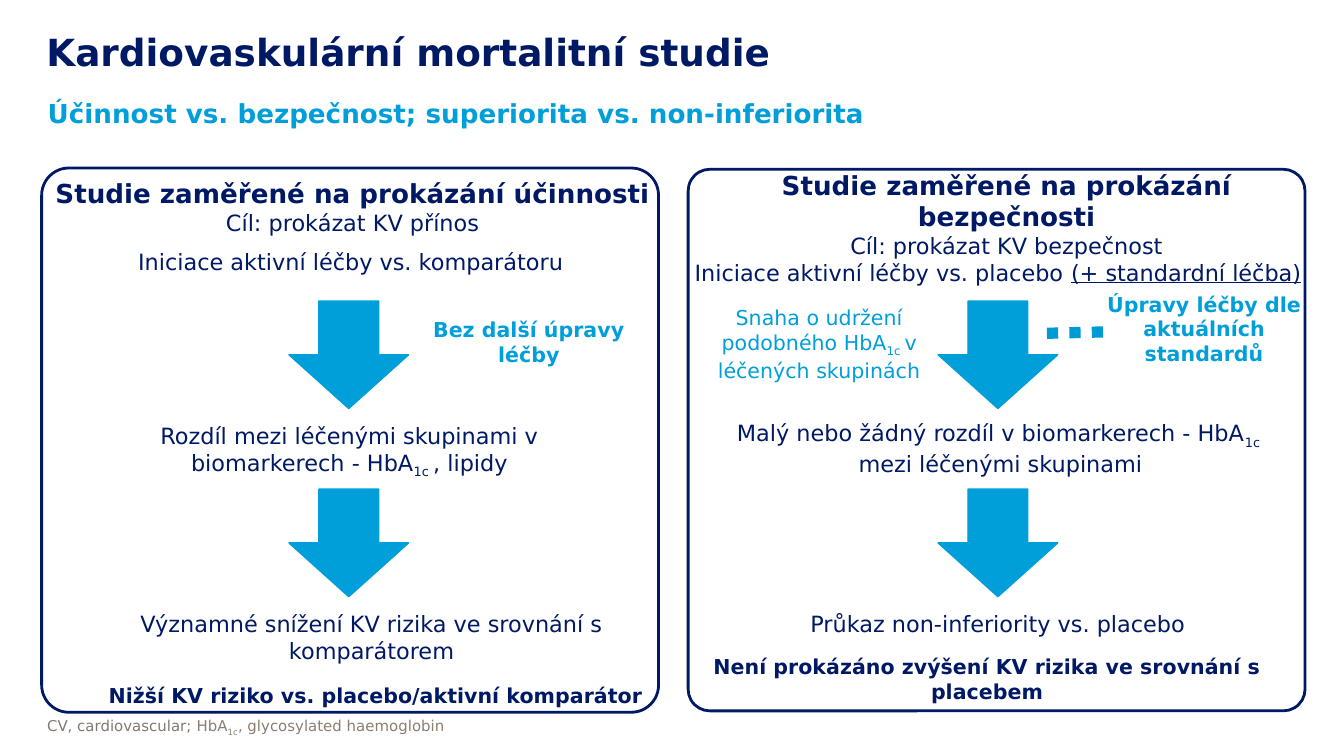
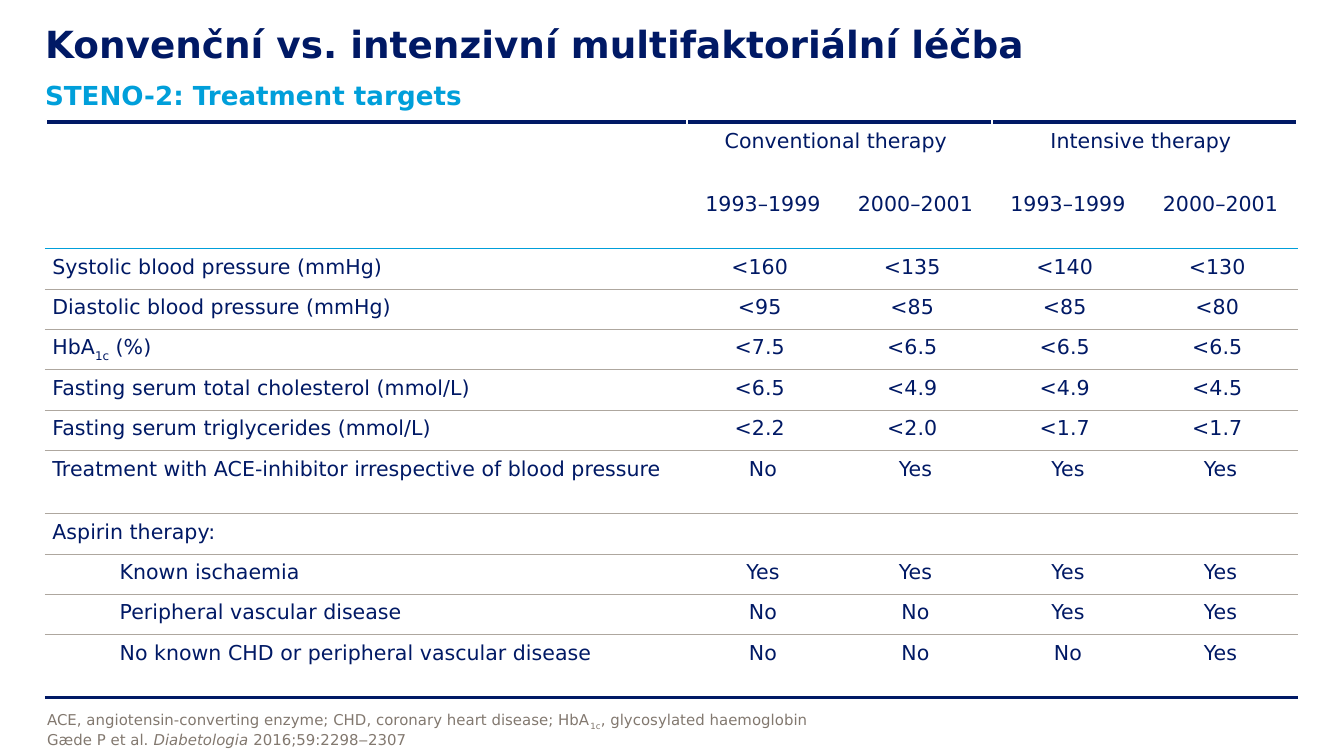
from copy import deepcopy
from dataclasses import dataclass
from typing import Any, NamedTuple

from lxml.etree import SubElement
from pptx import Presentation
from pptx.dml.color import RGBColor
from pptx.enum.dml import MSO_LINE
from pptx.enum.shapes import MSO_CONNECTOR, MSO_SHAPE as Preset
from pptx.enum.text import MSO_ANCHOR as Anchor, MSO_AUTO_SIZE as AutoSize, PP_ALIGN as Align
from pptx.oxml.ns import qn
from pptx.util import Emu, Inches, Pt

COLORS = {
    "navy": "001965",
    "sky": "009FDA",
    "dots": "009BD5",
    "grey": "82786F",
    "warm grey": "8B7D70",
    "rule": "AEA79F",
    "white": "FFFFFF",
}
FONT = "DejaVu Sans"
SLIDE_WIDTH = Inches(10)
SLIDE_HEIGHT = Emu(SLIDE_WIDTH * 9 // 16)
GRID_COLUMNS = 100
UNIT = SLIDE_WIDTH / GRID_COLUMNS  # grid cells are square


class Box(NamedTuple):
    """Left, top, width and height in grid cells."""
    left: float
    top: float
    width: float
    height: float


class Style(NamedTuple):
    size: float
    color: str = "navy"
    bold: bool = False


class Run(NamedTuple):
    text: str
    subscript: bool = False
    underline: bool = False
    italic: bool = False
    color: str = ""
    break_after: bool = False


class Line(NamedTuple):
    """One paragraph: its style and its runs."""
    style: Style
    runs: tuple[Run, ...]


@dataclass(frozen=True)
class Label:
    box: Box
    lines: tuple[Line, ...]
    align: Any = Align.CENTER
    wrap: bool = True


@dataclass(frozen=True)
class Panel:
    frame: Box
    rounding: float
    arrow_left: float
    labels: tuple[Label, ...]


TITLE = Style(20, bold=True)
SUBTITLE = Style(14, "sky", True)
HEADING = Style(14, bold=True)
BODY = Style(12)
RESULT = Style(11, bold=True)
NOTE = Style(11, "sky")
STRONG_NOTE = Style(11, "sky", True)
CELL = Style(11)
FOOTNOTE = Style(8, "grey")
ARROW_TOPS = (22.4, 36.4)
ARROW_SIZE = (8.9, 8.0)
SUB_1C = Run("1c", subscript=True)
SUB_1C_SPACE = Run("1c ", subscript=True)


def line(style: Style, *runs: str | Run) -> Line:
    return Line(style, tuple(Run(run) if isinstance(run, str) else run for run in runs))


PANELS = (
    Panel(Box(3.1, 12.5, 45.9, 40.5), 0.05, 21.5, (
        Label(Box(3.1, 12.7, 46.3, 5.4), (
            line(HEADING, "Studie zaměřené na prokázání účinnosti"),
            line(BODY, "Cíl: prokázat KV přínos")), wrap=False),
        Label(Box(7.1, 50.3, 42.4, 2.9), (
            line(RESULT, "Nižší KV riziko vs. placebo/aktivní komparátor"),), Align.LEFT, False),
        Label(Box(9.3, 18, 34.3, 3), (
            line(BODY, "Iniciace aktivní léčby vs. komparátoru"),), Align.LEFT, False),
        Label(Box(8.6, 30.9, 34.8, 5), (
            line(BODY, "Rozdíl mezi léčenými skupinami v biomarkerech - HbA",
                 SUB_1C_SPACE, ", lipidy"),)),
        Label(Box(9.4, 44.9, 36.5, 5), (
            line(BODY, "Významné snížení KV rizika ve srovnání s komparátorem"),)),
        Label(Box(29.8, 23.1, 19.1, 4.7), (line(STRONG_NOTE, "Bez další úpravy léčby"),)),
    )),
    Panel(Box(51.2, 12.6, 45.9, 40.3), 0.04, 69.8, (
        Label(Box(50.7, 12.1, 48.4, 7.7), (
            line(HEADING, "Studie zaměřené na prokázání bezpečnosti"),
            line(BODY, "Cíl: prokázat KV bezpečnost"))),
        Label(Box(50.3, 48.2, 46.3, 4.7), (
            line(RESULT, "Není prokázáno zvýšení KV rizika ve srovnání s placebem"),)),
        Label(Box(50.7, 18.8, 48, 3), (
            line(BODY, "Iniciace aktivní léčby vs. placebo ",
                 Run("(+ standardní léčba)", underline=True)),), Align.LEFT, False),
        Label(Box(53.2, 30.7, 42.5, 5), (
            line(BODY, "Malý nebo žádný rozdíl v biomarkerech - HbA",
                 Run("1c ", subscript=True, break_after=True),
                 "mezi léčenými skupinami"),), wrap=False),
        Label(Box(51.4, 22.2, 19.1, 6.6), (
            line(NOTE, "Snaha o udržení podobného HbA", SUB_1C_SPACE, "v léčených skupinách"),)),
        Label(Box(59, 44.9, 30.5, 3), (
            line(BODY, "Průkaz non-inferiority vs. placebo"),), wrap=False),
        Label(Box(81.3, 21.2, 16.6, 6.6), (
            line(STRONG_NOTE, "Úpravy léčby dle aktuálních standardů"),)),
    )),
)

TARGETS_BOX = Box(3.4, 9.1, 93.1, 42.7)
TARGET_COLUMNS = (47.7,) + (11.35,) * 4
TALL_ROW, LOW_ROW = 4.7, 3.0
TALL_ROWS = (0, 1, 7, 11)
TARGETS: tuple[tuple[str | tuple[str | Run, ...], ...], ...] = (
    ("", "Conventional therapy ", "", "Intensive therapy ", ""),
    ("",) + ("1993–1999", "2000–2001") * 2,
    ("Systolic blood pressure (mmHg)", "<160 ", "<135 ", "<140 ", "<130 "),
    ("Diastolic blood pressure (mmHg)", "<95 ", "<85 ", "<85 ", "<80 "),
    (("HbA", SUB_1C, " (%)"), "<7.5 ", "<6.5 ", "<6.5 ", "<6.5 "),
    ("Fasting serum total cholesterol (mmol/L)", "<6.5 ", "<4.9 ", "<4.9 ", "<4.5 "),
    ("Fasting serum triglycerides (mmol/L)", "<2.2 ", "<2.0 ", "<1.7 ", "<1.7 "),
    ("Treatment with ACE-inhibitor irrespective of blood pressure", "No", "Yes", "Yes", "Yes"),
    ("Aspirin therapy:", "", "", "", ""),
    ("Known ischaemia", "Yes", "Yes", "Yes", "Yes"),
    ("Peripheral vascular disease", "No", "No", "Yes", "Yes"),
    ("No known CHD or peripheral vascular disease", "No", "No", "No", "Yes"),
)
INDENTED_ROWS = (9, 10, 11)
# Rules above each row, then the one below the last row
ROW_RULES = ([("navy", 2.25), ("white", 1), ("sky", 1)]
             + [("rule", 0.25)] * (len(TARGETS) - 3) + [("navy", 2.25)])


def cells(count: float) -> Emu:
    return Emu(round(count * UNIT))


def place(box: Box) -> tuple[Emu, ...]:
    return tuple(cells(length) for length in box)


def rgb(name: str) -> RGBColor:
    return RGBColor.from_string(COLORS[name])


def write_line(paragraph: Any, text: Line, align: Any) -> None:
    paragraph.alignment = align
    for part in text.runs:
        run = paragraph.add_run()
        run.text = part.text
        font = run.font
        font.name, font.size, font.bold = FONT, Pt(text.style.size), text.style.bold
        font.color.rgb = rgb(part.color or text.style.color)
        if part.underline:
            font.underline = True
        if part.italic:
            font.italic = True
        if part.subscript:
            font._element.set("baseline", "-25000")
        if part.break_after:
            paragraph.add_line_break()
            paragraph._p[-1].append(deepcopy(font._element))


def write_frame(frame: Any, lines: tuple[Line, ...], align: Any) -> None:
    for index, text in enumerate(lines):
        paragraph = frame.add_paragraph() if index else frame.paragraphs[0]
        write_line(paragraph, text, align)


def write_flush(shape: Any, lines: tuple[Line, ...], anchor: Any, right: float = 0) -> None:
    """Fill a box that has no inner margins except on the right."""
    frame = shape.text_frame
    frame.word_wrap, frame.auto_size = True, AutoSize.NONE
    frame.vertical_anchor = anchor
    frame.margin_left = frame.margin_top = frame.margin_bottom = 0
    frame.margin_right = cells(right)
    write_frame(frame, lines, Align.LEFT)


def add_titled_slide(presentation: Any, title: str, title_at: tuple[float, float], subtitle: str,
                     subtitle_at: tuple[float, float], footnote: tuple[Line, ...],
                     footnote_top: float) -> Any:
    slide = presentation.slides.add_slide(presentation.slide_layouts[5])
    heading = slide.shapes.title
    heading.left, heading.top, heading.width, heading.height = place(Box(*title_at, 93.1, 4.3))
    write_flush(heading, (line(TITLE, title),), Anchor.MIDDLE)
    subtitle_box = slide.shapes.add_textbox(*place(Box(*subtitle_at, 93.1, 2.4)))
    write_flush(subtitle_box, (line(SUBTITLE, subtitle),), Anchor.TOP, 2.4)
    footnote_box = slide.shapes.add_textbox(*place(Box(3.5, footnote_top, 93.1, 3)))
    write_flush(footnote_box, footnote, Anchor.BOTTOM, 2.4)
    return slide


def add_label(shapes: Any, label: Label) -> None:
    frame = shapes.add_textbox(*place(label.box)).text_frame
    frame.word_wrap, frame.auto_size = label.wrap, AutoSize.SHAPE_TO_FIT_TEXT
    write_frame(frame, label.lines, label.align)


def add_preset(shapes: Any, preset: Any, box: Box, color: str, width: float, filled: bool) -> Any:
    shape = shapes.add_shape(preset, *place(box))
    shape.shadow.inherit = False
    shape.line.color.rgb, shape.line.width = rgb(color), Pt(width)
    if filled:
        shape.fill.solid()
        shape.fill.fore_color.rgb = rgb(color)
    else:
        shape.fill.background()
    return shape


def add_panel(slide: Any, panel: Panel) -> Any:
    shapes = slide.shapes.add_group_shape().shapes
    frame = add_preset(shapes, Preset.ROUNDED_RECTANGLE, panel.frame, "navy", 1.5, False)
    frame.adjustments[0] = panel.rounding
    for top in ARROW_TOPS:
        add_preset(shapes, Preset.DOWN_ARROW, Box(panel.arrow_left, top, *ARROW_SIZE),
                   "sky", 0.75, True)
    for label in panel.labels:
        add_label(shapes, label)
    return shapes


def add_dots(shapes: Any) -> None:
    dots = shapes.add_connector(MSO_CONNECTOR.STRAIGHT, cells(77.9), cells(24.8),
                                cells(82.1), cells(24.7))
    dots.line.color.rgb, dots.line.width = rgb("dots"), Pt(6)
    dots.line.dash_style = MSO_LINE.ROUND_DOT
    SubElement(dots._element.spPr, qn("a:effectLst"))


def set_borders(cell: Any, above: tuple[str, float], below: tuple[str, float]) -> None:
    properties = cell._tc.get_or_add_tcPr()
    side = ("white", 1)
    for tag, (color, width) in zip(("lnL", "lnR", "lnT", "lnB"), (side, side, above, below)):
        border = SubElement(properties, qn(f"a:{tag}"), w=str(Pt(width)))
        fill = SubElement(border, qn("a:solidFill"))
        SubElement(fill, qn("a:srgbClr"), val=COLORS[color])


def add_targets_table(slide: Any) -> None:
    table = slide.shapes.add_table(len(TARGETS), len(TARGET_COLUMNS), *place(TARGETS_BOX)).table
    table.first_row = table.horz_banding = False
    for column, width in zip(table.columns, TARGET_COLUMNS):
        column.width = cells(width)
    for row_index, values in enumerate(TARGETS):
        table.rows[row_index].height = cells(TALL_ROW if row_index in TALL_ROWS else LOW_ROW)
        for column_index, value in enumerate(values):
            cell = table.cell(row_index, column_index)
            cell.margin_left = cell.margin_right = cells(0.5)
            cell.margin_top = cell.margin_bottom = cells(0.5)
            below = ("white", 3) if row_index == 0 else ROW_RULES[row_index + 1]
            set_borders(cell, ROW_RULES[row_index], below)
            cell.fill.background()
            paragraph = cell.text_frame.paragraphs[0]
            if not value:
                SubElement(paragraph._p, qn("a:endParaRPr"), sz=str(CELL.size * 100))
                continue
            if column_index == 0 and row_index in INDENTED_ROWS:
                paragraph.level = 1
                paragraph._p.get_or_add_pPr().set("marL", str(cells(5)))
                paragraph._p.get_or_add_pPr().set("indent", "0")
            runs = value if isinstance(value, tuple) else (value,)
            write_line(paragraph, line(CELL, *runs), Align.CENTER if column_index else Align.LEFT)
    for first in (1, 3):
        table.cell(0, first).merge(table.cell(0, first + 1))


def main() -> None:
    presentation = Presentation()
    presentation.slide_width, presentation.slide_height = SLIDE_WIDTH, SLIDE_HEIGHT

    studies = add_titled_slide(
        presentation, "Kardiovaskulární mortalitní studie", (3.45, 1.7),
        "Účinnost vs. bezpečnost; superiorita vs. non-inferiorita", (3.55, 7.25),
        (line(FOOTNOTE, "CV, cardiovascular; ", Run("HbA", color="warm grey"),
              Run("1c", subscript=True, color="warm grey"),
              Run(", glycosylated haemoglobin", color="warm grey")),), 51.85)
    efficacy, safety = (add_panel(studies, panel) for panel in PANELS)
    add_dots(safety)

    targets = add_titled_slide(
        presentation, "Konvenční vs. intenzivní multifaktoriální léčba", (3.35, 1.1),
        "STENO-2: Treatment targets", (3.35, 5.9),
        (line(FOOTNOTE, "ACE, angiotensin-converting enzyme; CHD, coronary heart disease; HbA",
              SUB_1C, ", glycosylated haemoglobin"),
         line(FOOTNOTE, "Gæde P et al. ", Run("Diabetologia ", italic=True),
              "2016;59:2298‒2307")), 52.7)
    add_targets_table(targets)
    presentation.save("out.pptx")


if __name__ == "__main__":
    main()
